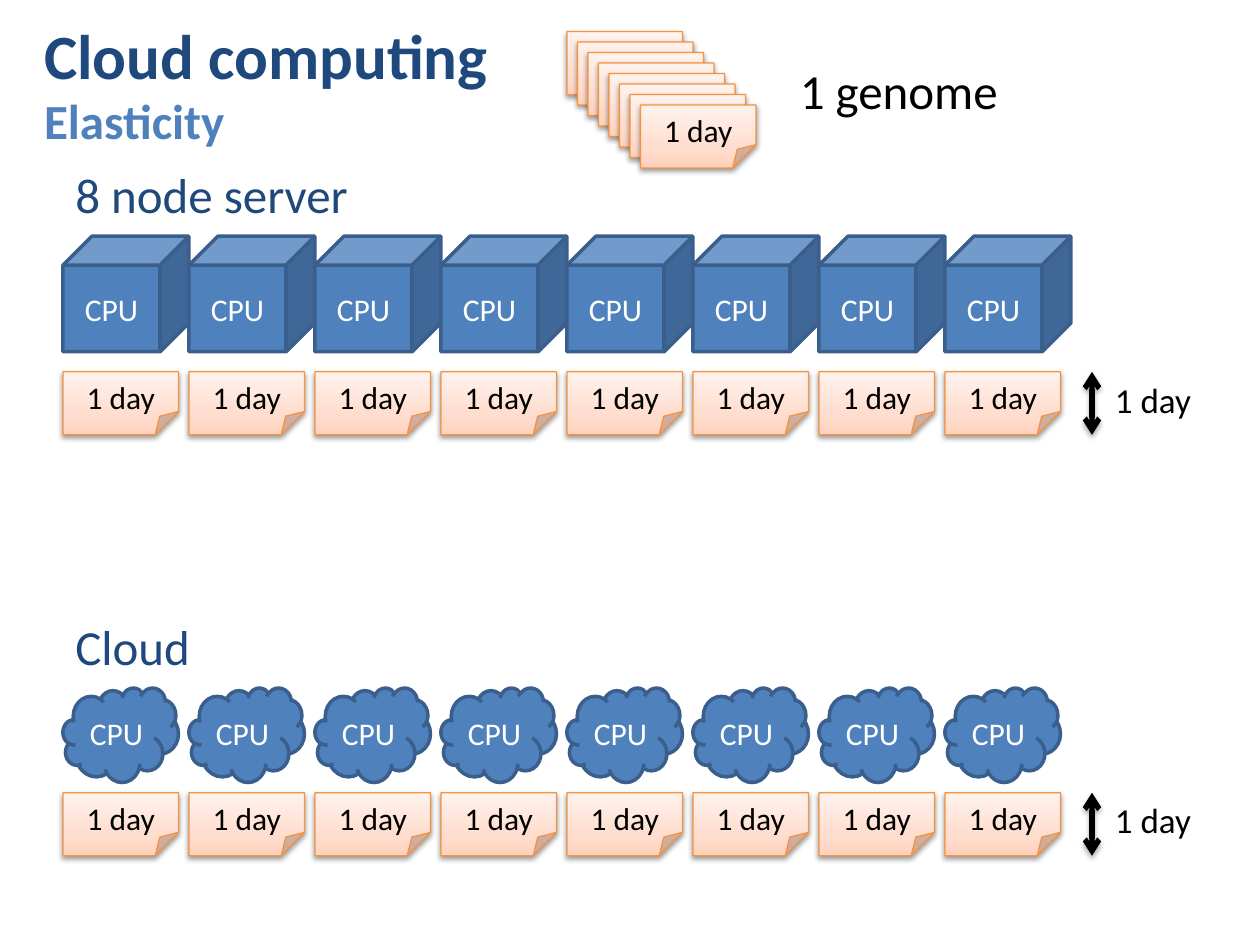
"""Build the cloud computing elasticity slide: eight server nodes against eight cloud nodes."""
from copy import deepcopy
from dataclasses import dataclass

from lxml.etree import SubElement
from pptx import Presentation
from pptx.dml.color import RGBColor
from pptx.enum.shapes import MSO_CONNECTOR, MSO_SHAPE
from pptx.enum.text import MSO_ANCHOR, MSO_AUTO_SIZE, PP_ALIGN
from pptx.oxml.ns import qn
from pptx.util import Pt

TITLE, SUBTITLE = "Cloud computing", "Elasticity"
GENOME, TASK, NODE = "1 genome", "1 day", "CPU"
NODE_COUNT = 8
SYSTEMS = [
    {"name": "8 node server", "heading_top": 90.75, "shape": MSO_SHAPE.CUBE,
     "node_top": 135, "node_size": (72, 66), "inset": None, "task_top": 212.5},
    {"name": "Cloud", "heading_top": 348.5, "shape": MSO_SHAPE.CLOUD,
     "node_top": 393, "node_size": (66, 54), "inset": 0, "task_top": 453},
]

LEFT, PITCH = 36, 72
TASK_WIDTH, TASK_HEIGHT = 66, 36
STACK_LEFT, STACK_TOP, STACK_STEP = 324, 18, 6
ARROW_LEFT, DURATION_LEFT = 624, 630


@dataclass(frozen=True)
class Theme:
    font: str = "Calibri"
    navy: str = "1F497D"
    blue: str = "4F81BD"
    blue_edge: str = "3A5F8C"
    orange_edge: str = "F69240"
    black: str = "000000"
    white: str = "FFFFFF"
    peach: tuple = ((0, "FFD2BD"), (0.35, "FFDED0"), (1, "FFF2ED"))
    title_size: int = 36
    heading_size: int = 28
    duration_size: int = 20
    label_size: int = 18


THEME = Theme()


def rgb(value):
    return RGBColor.from_string(value)


def write(box, text, *, size, color, bold=False, align=PP_ALIGN.LEFT,
          anchor=MSO_ANCHOR.TOP, inset=None, after=0, grow=False):
    frame = box.text_frame
    frame.word_wrap = True
    frame.auto_size = MSO_AUTO_SIZE.SHAPE_TO_FIT_TEXT if grow else MSO_AUTO_SIZE.NONE
    frame.vertical_anchor = anchor
    if inset is not None:
        frame.margin_left = frame.margin_right = Pt(inset)
        frame.margin_top = frame.margin_bottom = Pt(inset)
    para = frame.paragraphs[0]
    para.alignment = align
    para.space_before, para.space_after = Pt(0), Pt(after)
    span = para.add_run()
    span.text = text
    span.font.name = THEME.font
    span.font.size = Pt(size)
    span.font.bold = bold
    span.font.color.rgb = rgb(color)


def place(box, left, top, width, height):
    box.left, box.top, box.width, box.height = Pt(left), Pt(top), Pt(width), Pt(height)


def add_label(page, text, left, top, width, height, **style):
    box = page.shapes.add_textbox(Pt(left), Pt(top), Pt(width), Pt(height))
    write(box, text, after=6, grow=True, **style)


def add_shadow(item, opacity, distance):
    effects = SubElement(item._element.spPr, qn("a:effectLst"))
    shadow = SubElement(effects, qn("a:outerShdw"), blurRad=str(Pt(3.1)),
                        dist=str(Pt(distance)), dir="5400000", rotWithShape="0")
    color = SubElement(shadow, qn("a:srgbClr"), val=THEME.black)
    SubElement(color, qn("a:alpha"), val=str(opacity * 1000))


def fill_gradient(shape, stops):
    shape.fill.gradient()
    shape.fill.gradient_angle = 90
    stop_list = shape._element.spPr.find(qn("a:gradFill")).find(qn("a:gsLst"))
    stop_list.append(deepcopy(stop_list[-1]))
    for stop, (position, color) in zip(shape.fill.gradient_stops, stops):
        stop.position = position
        stop.color.rgb = rgb(color)


def fold_corner(note, ratio):
    geometry = note._element.spPr.find(qn("a:prstGeom"))
    SubElement(geometry.find(qn("a:avLst")), qn("a:gd"), name="adj",
               fmla=f"val {round(ratio * 100000)}")


def add_task(page, left, top, text=None):
    note = page.shapes.add_shape(MSO_SHAPE.FOLDED_CORNER, Pt(left), Pt(top),
                                 Pt(TASK_WIDTH), Pt(TASK_HEIGHT))
    fold_corner(note, 0.37)
    fill_gradient(note, THEME.peach)
    note.line.color.rgb = rgb(THEME.orange_edge)
    note.line.width = Pt(0.75)
    add_shadow(note, opacity=38, distance=1.6)
    if text:
        write(note, text, size=THEME.label_size, color=THEME.black, align=PP_ALIGN.CENTER)


def add_node(page, kind, left, top, size, inset):
    node = page.shapes.add_shape(kind, Pt(left), Pt(top), Pt(size[0]), Pt(size[1]))
    node.shadow.inherit = False
    node.fill.solid()
    node.fill.fore_color.rgb = rgb(THEME.blue)
    node.line.color.rgb = rgb(THEME.blue_edge)
    node.line.width = Pt(2)
    write(node, NODE, size=THEME.label_size, color=THEME.white, align=PP_ALIGN.CENTER,
          anchor=MSO_ANCHOR.MIDDLE, inset=inset)


def add_duration(page, top):
    arrow = page.shapes.add_connector(MSO_CONNECTOR.STRAIGHT, Pt(ARROW_LEFT), Pt(top),
                                      Pt(ARROW_LEFT), Pt(top + TASK_HEIGHT))
    arrow.line.color.rgb = rgb(THEME.black)
    arrow.line.width = Pt(3)
    outline = arrow._element.spPr.find(qn("a:ln"))
    for end in ("a:headEnd", "a:tailEnd"):
        SubElement(outline, qn(end), type="arrow")
    add_shadow(arrow, opacity=35, distance=1.8)
    add_label(page, TASK, DURATION_LEFT, top, 90, 31.5,
              size=THEME.duration_size, color=THEME.black)


def add_system(page, system):
    add_label(page, system["name"], LEFT, system["heading_top"], 252, 41,
              size=THEME.heading_size, color=THEME.navy)
    for index in range(NODE_COUNT):
        left = LEFT + index * PITCH
        add_task(page, left, system["task_top"], TASK)
        add_node(page, system["shape"], left, system["node_top"],
                 system["node_size"], system["inset"])
    add_duration(page, system["task_top"])


def add_headings(page):
    title, subtitle = page.shapes.title, page.placeholders[1]
    place(title, 18, 6, 684, 48)
    write(title, TITLE, size=THEME.title_size, color=THEME.navy, bold=True)
    place(subtitle, 18, 48, 684, 42)
    properties = subtitle.text_frame.paragraphs[0]._p.get_or_add_pPr()
    properties.set("marL", "0")
    properties.set("indent", "0")
    SubElement(properties, qn("a:buNone"))
    write(subtitle, SUBTITLE, size=THEME.heading_size, color=THEME.blue, bold=True)


def main():
    deck = Presentation()
    deck.slide_width, deck.slide_height = Pt(720), Pt(540)
    page = deck.slides.add_slide(deck.slide_layouts[1])
    add_headings(page)
    for index in range(NODE_COUNT):
        offset = index * STACK_STEP
        add_task(page, STACK_LEFT + offset, STACK_TOP + offset,
                 TASK if index == NODE_COUNT - 1 else None)
    add_label(page, GENOME, 450, 31, 240, 41, size=THEME.heading_size, color=THEME.black)
    for system in SYSTEMS:
        add_system(page, system)
    deck.save("out.pptx")


if __name__ == "__main__":
    main()
